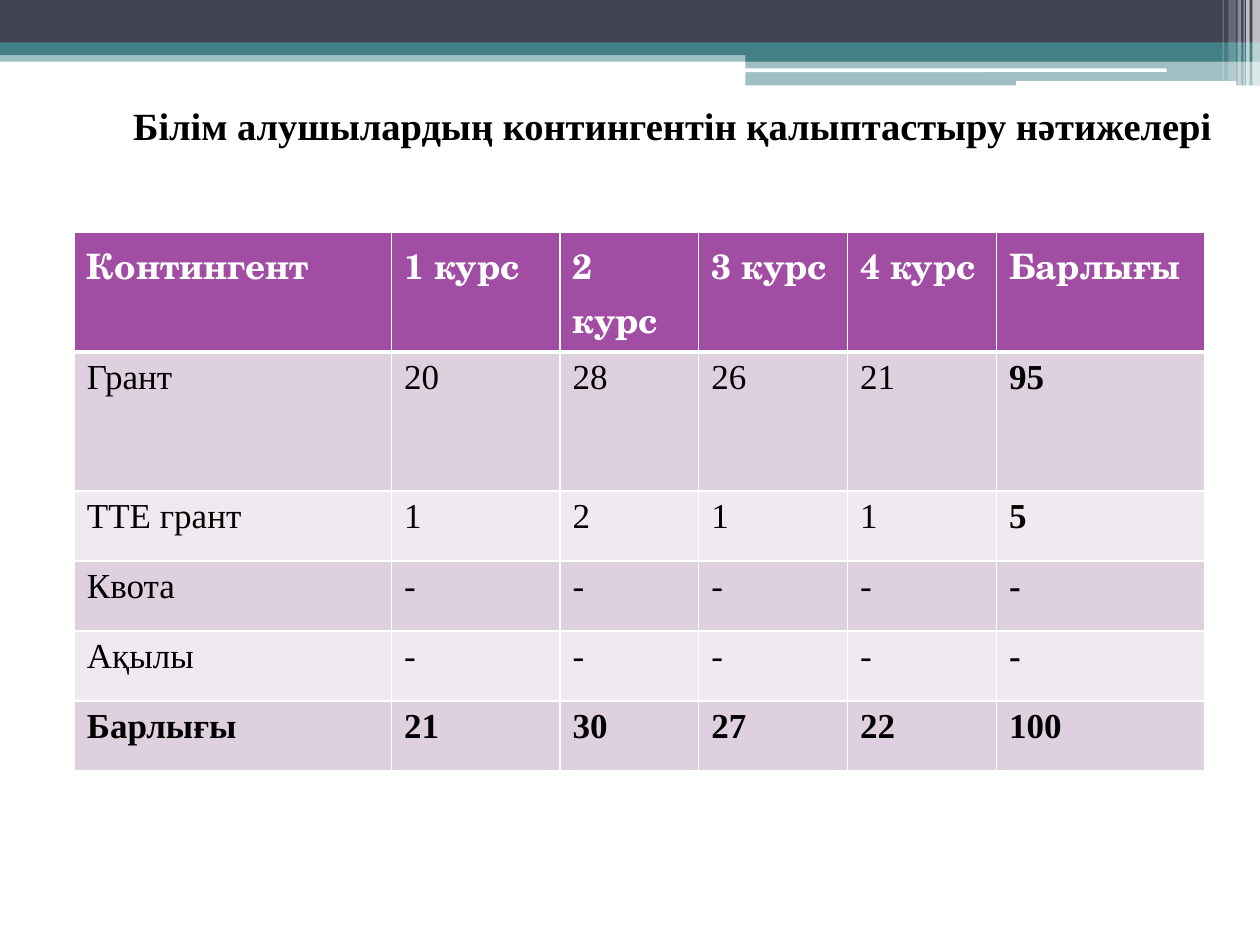
from pptx import Presentation
from pptx import util as u
from pptx.dml.color import RGBColor
from pptx.enum import shapes, text
from pptx.oxml.ns import qn
from lxml import etree

Pt = u.Pt
DARK, TEAL, WHITE, BLACK = "424456", "438086", "FFFFFF", "000000"
HEAD, ODD, EVEN = "A04DA3", "DFD0E0", "F0E9F0"
SERIF, SCHOOL = "Times New Roman", "TeX Gyre Schola"


def rgb(hex):
    return RGBColor.from_string(hex)


def write(frame, words, font=SERIF, size=20, color=BLACK, bold=False,
          align=text.PP_ALIGN.LEFT):
    """Put one formatted paragraph into a text frame."""
    para = frame.paragraphs[0]
    para.alignment = align
    run = para.add_run()
    run.text = words
    run.font.name = font
    run.font.size = Pt(size)
    run.font.bold = bold
    run.font.color.rgb = rgb(color)


deck = Presentation()
deck.slide_width, deck.slide_height = Pt(720), Pt(540)
slide = deck.slides.add_slide(deck.slide_layouts[6])

# Top banner: left, top, width, height, colour, opacity in percent, rounded
bars = [
    (0, 28.8, 720, 6.5, TEAL, 50, False),
    (0, 0, 720, 25, DARK, 100, False),
    (0, 24.3, 720, 7.2, TEAL, 100, False),
    (426, 28.1, 294, 7.2, TEAL, 100, False),
    (426, 34.9, 294, 14, TEAL, 50, False),
    (425.5, 39.1, 241.2, 2.1, WHITE, 100, True),
    (580.5, 46.2, 126, 2.8, WHITE, 100, True),
]
# White stripes at the right end: left, width, height, opacity
stripes = [
    (715.7, 4.3, 49, 65), (712.1, 2, 49, 65), (710.6, 0.72, 49, 60),
    (707.2, 2, 49, 40), (702, 4.3, 46, 20), (698.6, 0.72, 46, 30),
]
bars += [(x, 0, w, h, WHITE, a, False) for x, w, h, a in stripes]

kinds = shapes.MSO_SHAPE
for x, y, w, h, color, alpha, rounded in bars:
    kind = kinds.ROUNDED_RECTANGLE if rounded else kinds.RECTANGLE
    bar = slide.shapes.add_shape(kind, Pt(x), Pt(y), Pt(w), Pt(h))
    bar.shadow.inherit = False
    bar.line.fill.background()
    bar.fill.solid()
    bar.fill.fore_color.rgb = rgb(color)
    if alpha < 100:
        tint = bar._element.spPr.find(".//" + qn("a:srgbClr"))
        etree.SubElement(tint, qn("a:alpha"), val=str(alpha * 1000))

title = slide.shapes.add_textbox(Pt(65.5), Pt(54.7), Pt(637.2), Pt(33.8))
title.text_frame.word_wrap = False
write(title.text_frame, "Білім алушылардың контингентін қалыптастыру нәтижелері",
      size=22, bold=True, align=text.PP_ALIGN.CENTER)

rows = [
    ["Контингент", "1 курс", "2 курс", "3 курс", "4 курс", "Барлығы"],
    ["Грант", "20", "28", "26", "21", "95"],
    ["ТТЕ грант", "1", "2", "1", "1", "5"],
    ["Квота", "-", "-", "-", "-", "-"],
    ["Ақылы", "-", "-", "-", "-", "-"],
    ["Барлығы", "21", "30", "27", "22", "100"],
]
wides = [181.2, 96.3, 79.3, 85.1, 85.1, 119]
highs = [68.6, 79.4] + [40] * 4
last, end = len(rows) - 1, len(wides) - 1
grid = slide.shapes.add_table(len(rows), len(wides), Pt(42.5), Pt(132.5),
                              Pt(sum(wides)), Pt(sum(highs))).table
for col, wide in zip(grid.columns, wides):
    col.width = Pt(wide)
for row, high in zip(grid.rows, highs):
    row.height = Pt(high)

for r, row in enumerate(rows):
    for c, words in enumerate(row):
        cell = grid.cell(r, c)
        if r == 0:
            fill = HEAD
            write(cell.text_frame, words, font=SCHOOL, color=WHITE, bold=True)
        else:
            fill = ODD if r % 2 else EVEN
            side = text.PP_ALIGN.LEFT if c else text.PP_ALIGN.JUSTIFY
            write(cell.text_frame, words, bold=r == last or c == end, align=side)
        # Borders must precede the fill in the cell's XML
        props = cell._tc.get_or_add_tcPr()
        for edge in ("lnL", "lnR", "lnT", "lnB"):
            thick = (r, edge) in ((0, "lnB"), (1, "lnT"))
            line = etree.SubElement(props, qn("a:" + edge),
                                    w=str(Pt(3 if thick else 1)))
            solid = etree.SubElement(line, qn("a:solidFill"))
            etree.SubElement(solid, qn("a:srgbClr"), val=WHITE)
        cell.fill.solid()
        cell.fill.fore_color.rgb = rgb(fill)

deck.save("out.pptx")
